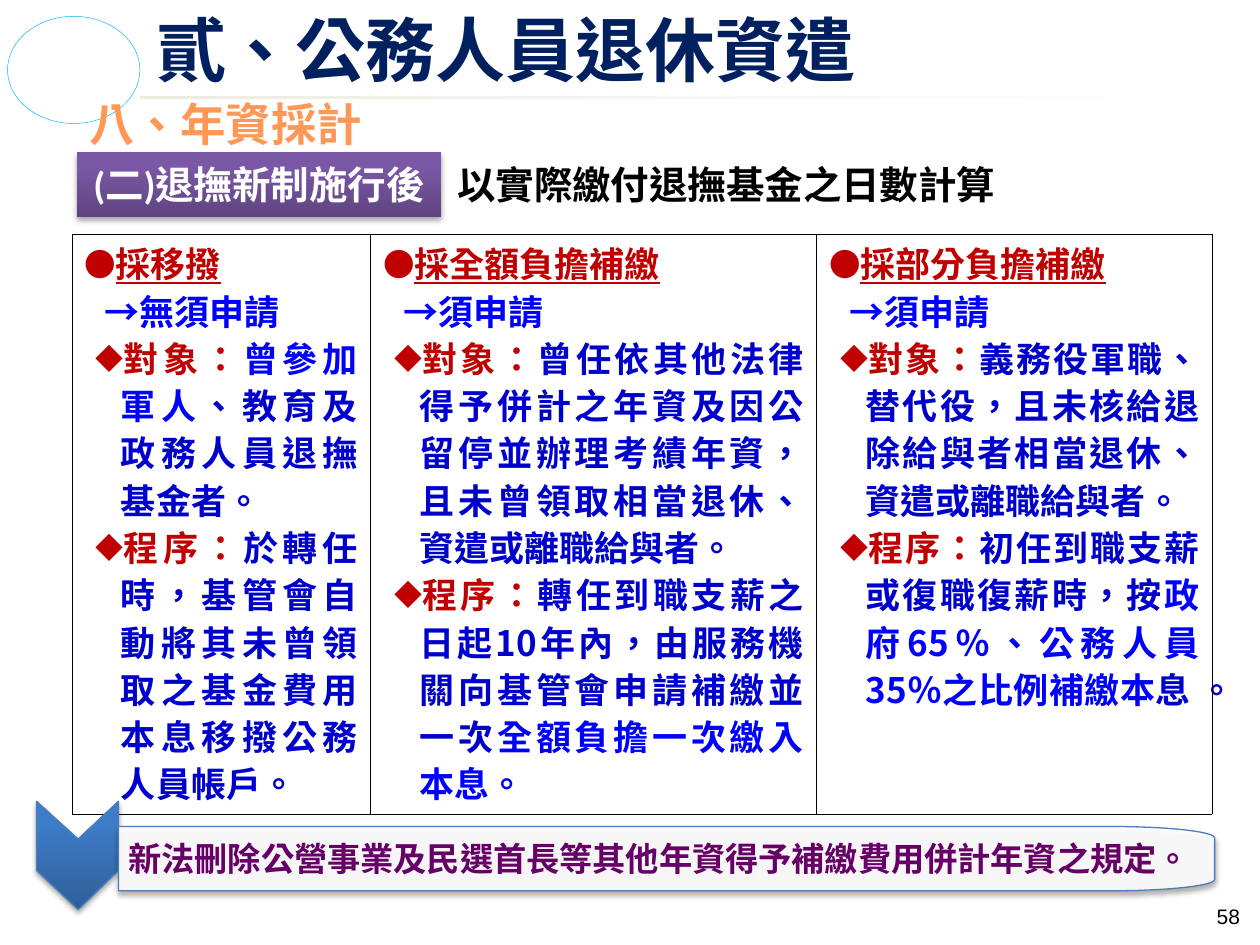
from math import cos, pi, sin

from lxml.etree import SubElement
from pptx import Presentation
from pptx.dml.color import RGBColor
from pptx.enum.lang import MSO_LANGUAGE_ID
from pptx.enum.shapes import MSO_SHAPE
from pptx.enum.text import MSO_ANCHOR, PP_ALIGN
from pptx.oxml.ns import qn
from pptx.util import Inches, Pt

CJK = "Noto Sans CJK SC"
RED, BLUE, NAVY = "C00000", "0000FF", "0000CC"

COLUMNS = [
    (2.37, "採移撥", "→無須申請", [
        [("對象：", RED), ("曾參加軍人", BLUE), ("、教育及政務人員退撫基金者。", NAVY)],
        [("程序：", RED), ("於轉任時，基管會自動將其未曾領取之基金費用本息移撥公務人員帳戶。", NAVY)],
    ]),
    (3.54, "採全額負擔補繳", "→須申請", [
        [("對象：", RED),
         ("曾任依其他法律得予併計之年資及因公留停並辦理考績年資，且未曾領取相當退休、資遣或離職給與者。", NAVY)],
        [("程序：", RED), ("轉任到職支薪之日起10年內，由服務機關向基管會申請補繳並一次", NAVY),
         ("全額負擔一次繳入本息。", BLUE)],
    ]),
    (3.14, "採部分負擔補繳", "→須申請", [
        [("對象：", RED), ("義務役軍職、替代役，且未核給退除給與者相當退休、資遣或離職給與者。", NAVY)],
        [("程序：", RED), ("初任到職支薪或復職復薪時，按", NAVY),
         ("政府65％、公務人員35％之比例補繳本", BLUE), ("息 。", NAVY)],
    ]),
]


def rgb(value):
    return RGBColor.from_string(value)


def style_run(run, size, color, bold=True, font=CJK):
    run.font.size = Pt(size)
    run.font.bold = bold
    run.font.name = font
    run.font.color.rgb = rgb(color)
    run.font.language_id = MSO_LANGUAGE_ID.TRADITIONAL_CHINESE
    SubElement(run.font._element, qn("a:ea"), typeface=CJK)


def add_run(paragraph, text, color):
    run = paragraph.add_run()
    run.text = text
    style_run(run, 20, color)
    return run


def write(shape, text, size, color, align=PP_ALIGN.LEFT, anchor=MSO_ANCHOR.TOP,
          wrap=True, **style):
    frame = shape.text_frame
    frame.text = text
    frame.word_wrap = wrap
    frame.vertical_anchor = anchor
    frame.paragraphs[0].alignment = align
    style_run(frame.paragraphs[0].runs[0], size, color, **style)


def text_box(slide, box, *args, **style):
    area = slide.shapes.add_textbox(*map(Inches, box))
    write(area, *args, **style)


def gradient(shape, start, end, angle, end_position=1):
    shape.fill.gradient()
    shape.fill.gradient_angle = angle
    first, last = shape.fill.gradient_stops
    first.color.rgb, last.color.rgb = rgb(start), rgb(end)
    first.position, last.position = 0, end_position


def cast_shadow(shape):
    shape.shadow.inherit = False
    effects = shape._element.spPr.find(qn("a:effectLst"))
    shadow = SubElement(effects, qn("a:outerShdw"), blurRad=str(Pt(3.1)),
                        dist=str(Pt(1.8)), dir="5400000", rotWithShape="0")
    black = SubElement(shadow, qn("a:srgbClr"), val="000000")
    SubElement(black, qn("a:alpha"), val="35000")


def polygon(slide, points):
    corners = [(Inches(x), Inches(y)) for x, y in points]
    builder = slide.shapes.build_freeform(*corners[0])
    builder.add_line_segments(corners[1:], close=True)
    shape = builder.convert_to_shape()
    shape.line.color.rgb = rgb("4B7EBC")
    shape.line.width = Pt(0.75)
    cast_shadow(shape)
    return shape


def add_header(slide, left, top, width):
    rule = slide.shapes.add_shape(MSO_SHAPE.RECTANGLE, Inches(left + 1.05),
                                  Inches(top + 0.63), Inches(width - 1.05), Inches(0.03))
    rule.shadow.inherit = False
    rule.line.fill.background()
    gradient(rule, "EEECE1", "FFFFFF", 0)
    ring = slide.shapes.add_shape(MSO_SHAPE.OVAL, Inches(left), Inches(top),
                                  Inches(1.05), Inches(0.85))
    ring.shadow.inherit = False
    ring.fill.background()
    ring.line.color.rgb = rgb("00B0F0")
    ring.line.width = Pt(0.25)
    text_box(slide, (left + 1.08, top - 0.1, 8.51, 0.71), "貳、公務人員退休資遣",
             40, "002060", anchor=MSO_ANCHOR.MIDDLE)


def add_section(slide, left, top):
    text_box(slide, (left, top, 8.68, 0.44), "八、年資採計", 26, "FF9856")
    period = slide.shapes.add_shape(MSO_SHAPE.RECTANGLE, Inches(left), Inches(top + 0.5),
                                    Inches(2.89), Inches(0.51))
    period.line.fill.background()
    gradient(period, "5F4480", "7B58A6", 90, 0.8)
    cast_shadow(period)
    write(period, "(二)退撫新制施行後", 22, "FFFFFF", PP_ALIGN.CENTER,
          MSO_ANCHOR.MIDDLE, wrap=False, font="Calibri")
    text_box(slide, (left + 2.92, top + 0.52, 4.52, 0.47), "以實際繳付退撫基金之日數計算",
             22, "000000", wrap=False)


def add_bullet(paragraph, mark, percent, margin, hang):
    paragraph.line_spacing = Pt(27)
    properties = paragraph._p.get_or_add_pPr()
    properties.set("marL", str(Inches(margin)))
    properties.set("indent", str(-Inches(hang)))
    color = SubElement(properties, qn("a:buClr"))
    SubElement(color, qn("a:srgbClr"), val=RED)
    SubElement(properties, qn("a:buSzPct"), val=str(percent * 1000))
    SubElement(properties, qn("a:buFont"), typeface=CJK)
    SubElement(properties, qn("a:buChar"), char=mark)


def border_cell(cell):
    properties = cell._tc.get_or_add_tcPr()
    for side in ("lnL", "lnR", "lnT", "lnB"):
        edge = SubElement(properties, qn(f"a:{side}"), w=str(Pt(0.25)))
        fill = SubElement(edge, qn("a:solidFill"))
        SubElement(fill, qn("a:srgbClr"), val="000000")
    cell.fill.background()


def fill_cell(cell, heading, action, details):
    border_cell(cell)
    lead = cell.text_frame.paragraphs[0]
    add_bullet(lead, "●", 90, 0.16, 0.16)
    add_run(lead, heading, RED).font.underline = True
    lead.add_line_break()
    add_run(lead, action, BLUE)
    for pieces in details:
        detail = cell.text_frame.add_paragraph()
        detail.level = 1
        detail.alignment = PP_ALIGN.JUSTIFY
        add_bullet(detail, "◆", 80, 0.29, 0.2)
        for text, color in pieces:
            add_run(detail, text, color)


def add_methods(slide, left, top, height):
    width = sum(column[0] for column in COLUMNS)
    methods = slide.shapes.add_table(1, len(COLUMNS), Inches(left), Inches(top),
                                     Inches(width), Inches(height)).table
    methods.first_row = methods.horz_banding = False
    for index, (column_width, *content) in enumerate(COLUMNS):
        methods.columns[index].width = Inches(column_width)
        fill_cell(methods.cell(0, index), *content)


def add_conclusion(slide, left, top):
    middle, right = left + 0.33, left + 0.65
    chevron = polygon(slide, [(right, top), (right, top + 0.55), (middle, top + 0.86),
                              (left, top + 0.55), (left, top), (middle, top + 0.3)])
    gradient(chevron, "2F5F99", "3D7CC7", 90, 0.8)

    end, upper, lower = right + 8.7, top + 0.2, top + 0.71
    curve = [(0.82 * sin(step * pi / 24), 0.09 * (1 - cos(step * pi / 24)))
             for step in range(13)]
    upper_corner = [(end - 0.82 + x, upper + y) for x, y in curve]
    lower_corner = [(end - 0.82 + x, lower - y) for x, y in reversed(curve)]
    banner = polygon(slide, [(right, upper), *upper_corner, *lower_corner, (right, lower)])
    banner.fill.solid()
    banner.fill.fore_color.rgb = rgb("FFFFFF")
    tint = banner._element.spPr.find(qn("a:solidFill"))[0]
    SubElement(tint, qn("a:alpha"), val="90000")
    frame = banner.text_frame
    frame.margin_left = frame.margin_right = Inches(0.08)
    frame.margin_top = frame.margin_bottom = Inches(0.08)
    write(banner, "新法刪除公營事業及民選首長等其他年資得予補繳費用併計年資之規定。",
          19, "660066", anchor=MSO_ANCHOR.MIDDLE)


def main():
    deck = Presentation()
    deck.slide_width, deck.slide_height = Inches(10), Inches(7.5)
    slide = deck.slides.add_slide(deck.slide_layouts[6])
    add_header(slide, 0.06, 0.13, 9.82)
    text_box(slide, (9.49, 7.12, 0.45, 0.36), "58", 12, "000000", PP_ALIGN.RIGHT,
             bold=False, font="Arial")
    add_section(slide, 0.61, 0.71)
    add_methods(slide, 0.57, 1.86, 4.57)
    add_conclusion(slide, 0.29, 6.36)
    deck.save("out.pptx")


if __name__ == "__main__":
    main()
